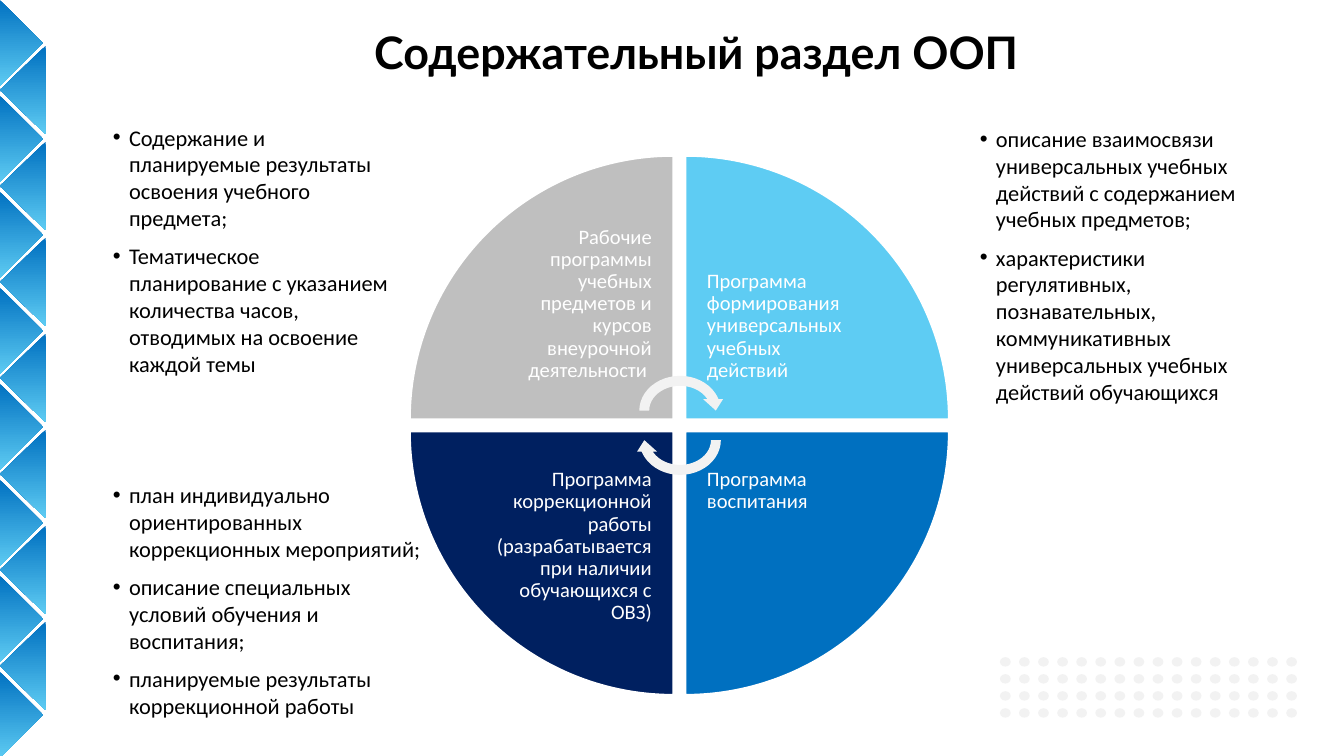
from dataclasses import dataclass

from lxml import etree
from pptx import Presentation
from pptx.dml.color import RGBColor
from pptx.enum import shapes, text
from pptx.oxml import ns
from pptx.util import Inches, Pt

COLORS = {
    "black": "000000",
    "white": "FFFFFF",
    "gray": "BFBFBF",
    "pale": "F2F2F2",
    "sky": "5ECCF3",
    "blue": "0070C0",
    "navy": "002060",
}
WEDGE_SIZE, LABEL_SIZE = 1.96, 1.39
LEFT, RIGHT, TOP, BOTTOM = 3.05, 5.1, 1.16, 3.21


@dataclass
class BulletList:
    placeholder: int
    box: tuple[float, float, float, float]
    items: list[str]


@dataclass
class Quadrant:
    is_left: bool
    is_top: bool
    rotation: int
    color: str
    label: str


BULLET_LISTS = [
    BulletList(1, (0.79, 0.87, 2.18, 1.03), [
        "Содержание и планируемые результаты освоения учебного предмета;",
        "Тематическое планирование с указанием количества часов, отводимых на освоение каждой темы",
    ]),
    BulletList(2, (7.24, 0.88, 2.37, 1.03), [
        "описание взаимосвязи универсальных учебных действий с содержанием учебных предметов;",
        "характеристики регулятивных, познавательных, коммуникативных универсальных учебных действий обучающихся",
    ]),
    BulletList(4, (0.79, 3.53, 2.43, 1.05), [
        "план индивидуально ориентированных коррекционных мероприятий;",
        "описание специальных условий обучения и воспитания;",
        "планируемые результаты коррекционной работы",
    ]),
]
QUADRANTS = [
    Quadrant(True, True, 0, "gray",
             "Рабочие программы учебных предметов и курсов внеурочной деятельности "),
    Quadrant(False, True, 90, "sky",
             "Программа формирования универсальных учебных действий"),
    Quadrant(False, False, 180, "blue", "Программа воспитания"),
    Quadrant(True, False, 270, "navy",
             "Программа коррекционной работы (разрабатывается при наличии обучающихся с ОВЗ)"),
]


def rgb(name: str) -> RGBColor:
    return RGBColor.from_string(COLORS[name])


def place(shape, box) -> None:
    shape.left, shape.top, shape.width, shape.height = map(Inches, box)


def set_frame(frame, insets, anchor) -> None:
    frame.word_wrap = True
    frame.auto_size = text.MSO_AUTO_SIZE.NONE
    frame.vertical_anchor = anchor
    (frame.margin_left, frame.margin_top,
     frame.margin_right, frame.margin_bottom) = map(Inches, insets)


def set_font(paragraph, name: str, size: int, color: str, bold: bool = False) -> None:
    font = paragraph.font
    font.name, font.size, font.bold = name, Pt(size), bold
    font.color.rgb = rgb(color)


def add_shape(slide, kind, box, color: str, rotation: int = 0):
    shape = slide.shapes.add_shape(kind, *map(Inches, box))
    shape.shadow.inherit = False
    shape.rotation = rotation
    shape.fill.solid()
    shape.fill.fore_color.rgb = rgb(color)
    shape.line.fill.background()
    return shape


def add_triangle(slide, base_x: float, tip_x: float, middle: float) -> None:
    half = 0.33
    builder = slide.shapes.build_freeform(
        Inches(tip_x), Inches(middle), scale=1.0)
    builder.add_line_segments([
        (Inches(base_x), Inches(middle - half)),
        (Inches(base_x), Inches(middle + half)),
    ], close=True)
    triangle = builder.convert_to_shape()
    triangle.shadow.inherit = False
    triangle.line.fill.background()
    triangle.fill.gradient()
    triangle.fill.gradient_angle = 270
    for stop, color, position in zip(
            triangle.fill.gradient_stops, ("blue", "sky"), (0, 1)):
        stop.color.rgb = rgb(color)
        stop.position = position


def fill_list(slide, bullet_list: BulletList) -> None:
    shape = slide.placeholders[bullet_list.placeholder]
    place(shape, bullet_list.box)
    frame = shape.text_frame
    set_frame(frame, [0.05] * 4, text.MSO_ANCHOR.TOP)
    frame.text = "\n".join(bullet_list.items)
    for paragraph in frame.paragraphs:
        paragraph.space_before, paragraph.space_after = Pt(0), Pt(6)
        paragraph.line_spacing = 1.0
        properties = paragraph._p.get_or_add_pPr()
        properties.set("marL", str(Inches(0.12)))
        properties.set("indent", str(-Inches(0.12)))
        etree.SubElement(properties, ns.qn("a:buChar")).set("char", "•")
        set_font(paragraph, "Calibri", 12, "black")


def add_quadrant(slide, quadrant: Quadrant) -> None:
    left = LEFT if quadrant.is_left else RIGHT
    top = TOP if quadrant.is_top else BOTTOM
    wedge = add_shape(slide, shapes.MSO_SHAPE.PIE_WEDGE,
                      (left, top, WEDGE_SIZE, WEDGE_SIZE),
                      quadrant.color, quadrant.rotation)
    wedge.line.color.rgb = rgb("white")
    wedge.line.width = Pt(1)

    # The label sits in the corner nearest the centre of the circle
    shift = WEDGE_SIZE - LABEL_SIZE
    label = slide.shapes.add_textbox(
        Inches(left + shift * quadrant.is_left),
        Inches(top + shift * quadrant.is_top),
        Inches(LABEL_SIZE), Inches(LABEL_SIZE))
    set_frame(
        label.text_frame,
        (0 if quadrant.is_left else 0.16, 0.16 if quadrant.is_top else 0.28,
         0.16, 0.28 if quadrant.is_top else 0.16),
        text.MSO_ANCHOR.BOTTOM if quadrant.is_top else text.MSO_ANCHOR.TOP)
    paragraph = label.text_frame.paragraphs[0]
    paragraph.text = quadrant.label
    paragraph.alignment = text.PP_ALIGN.RIGHT if quadrant.is_left else text.PP_ALIGN.LEFT
    paragraph.line_spacing = 0.9
    set_font(paragraph, "Calibri", 11, "white")


def main() -> None:
    # A 16:9 slide
    presentation = Presentation()
    presentation.slide_width = Inches(10)
    presentation.slide_height = Inches(10) * 9 // 16
    slide = presentation.slides.add_slide(presentation.slide_layouts[4])
    spare = slide.placeholders[3].element
    spare.getparent().remove(spare)

    # Triangle border on the left edge
    pitch = 5 / 7
    for row in range(8):
        add_triangle(slide, -0.01, 0.32, 0.32 + pitch * row)
    for row in range(7):
        add_triangle(slide, 0.34, 0, 0.67 + pitch * row)

    # Title
    title = slide.shapes.title
    place(title, (0.87, 0.19, 8.62, 0.44))
    set_frame(title.text_frame, (0.07, 0.04, 0.07, 0.04), text.MSO_ANCHOR.MIDDLE)
    title.text_frame.text = "Содержательный раздел ООП"
    paragraph = title.text_frame.paragraphs[0]
    paragraph.alignment = text.PP_ALIGN.CENTER
    paragraph.line_spacing = 0.9
    set_font(paragraph, "Lato", 24, "black", bold=True)

    # Lists around the circle
    for bullet_list in BULLET_LISTS:
        fill_list(slide, bullet_list)

    # Circle of four programmes with the turning arrows
    for quadrant in QUADRANTS:
        add_quadrant(slide, quadrant)
    for top, rotation in ((2.76, 0), (2.98, 180)):
        add_shape(slide, shapes.MSO_SHAPE.CIRCULAR_ARROW,
                  (4.72, top, 0.68, 0.59), "pale", rotation)

    # Dot grid
    rows, columns = 4, 16
    for row in range(rows):
        for column in range(columns):
            left = 7.44 + 2.13 * column / (columns - 1)
            top = 4.89 + 0.38 * row / (rows - 1)
            add_shape(slide, shapes.MSO_SHAPE.OVAL, (left, top, 0.08, 0.07), "pale")

    presentation.save("out.pptx")


if __name__ == "__main__":
    main()
